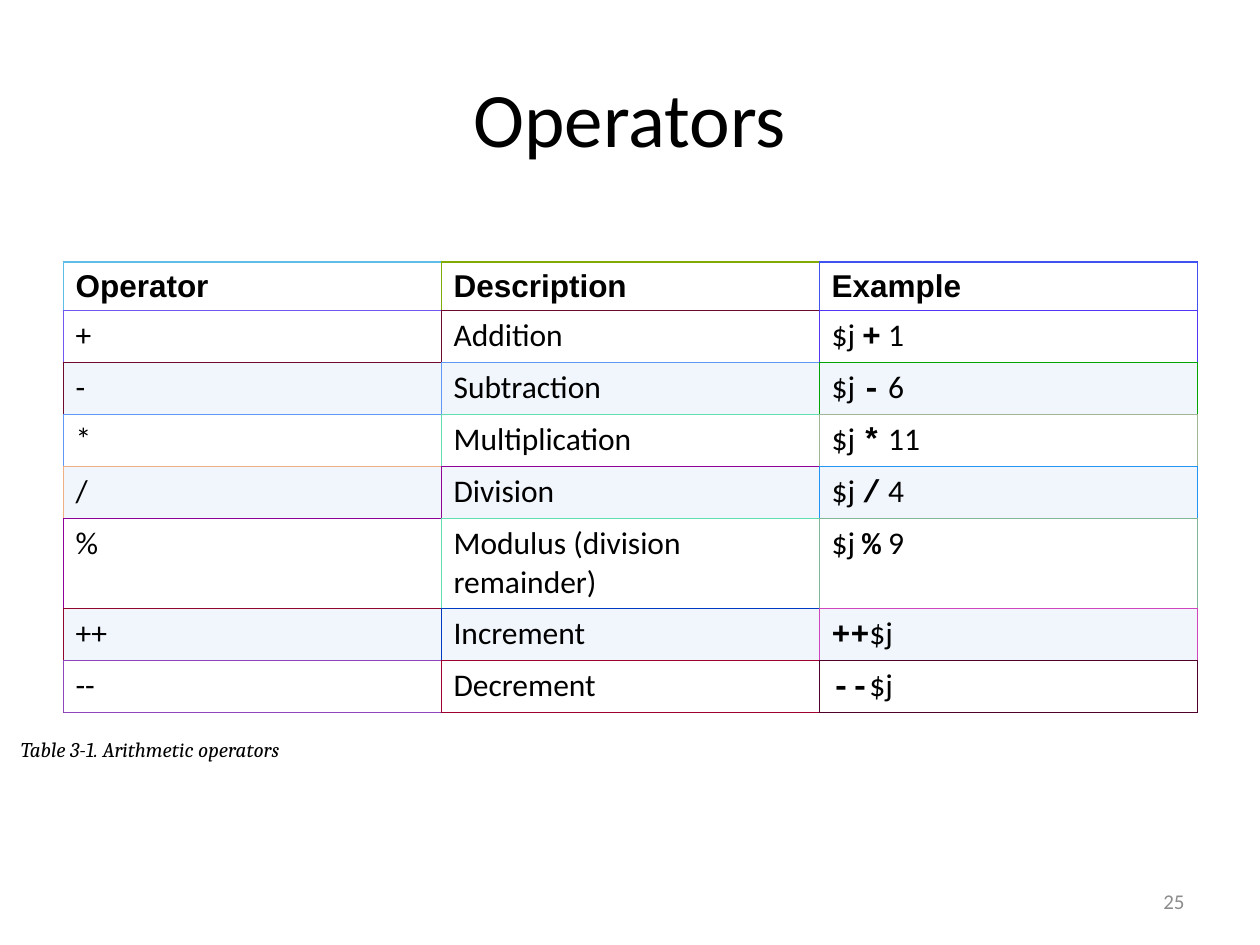
import lxml.etree
import pptx
import pptx.dml.color
import pptx.enum.text
import pptx.oxml.ns
import pptx.util

Cm = pptx.util.Cm
Pt = pptx.util.Pt
ANCHOR = pptx.enum.text.MSO_ANCHOR
ALIGN = pptx.enum.text.PP_ALIGN

BLACK = "000000"
BAND = "F1F6FC"
HEADERS = ["Operator", "Description", "Example"]
OPERATORS = [
    ("+", "Addition", "$j ", " 1"),
    ("-", "Subtraction", "$j ", " 6"),
    ("*", "Multiplication", "$j ", " 11"),
    ("/", "Division", "$j ", " 4"),
    ("%", "Modulus (division remainder)", "$j ", " 9"),
    ("++", "Increment", "", "$j"),
    ("--", "Decrement", "", "$j"),
]
BORDER_COLORS = [
    ("60BDE5", "80AC05", "4052EF"),
    ("7059EF", "700A2D", "5037F6"),
    ("700A2D", "6098F6", "00A405"),
    ("6098F6", "60E0B1", "A0B697"),
    ("F0AF82", "90019A", "2095F6"),
    ("90019A", "60E0B1", "80B897"),
    ("90062D", "0039C2", "D044BE"),
    ("9045BE", "A0002D", "50002D"),
]
HEADER_HEIGHT, ROW_HEIGHT, TALL_ROW_HEIGHT = 0.97, 1.05, 1.8


def rgb(color):
    return pptx.dml.color.RGBColor.from_string(color)


def style(run, size, font="Calibri", color=BLACK, bold=False, italic=False):
    run.font.size = Pt(size)
    run.font.name = font
    run.font.color.rgb = rgb(color)
    run.font.bold = bold
    run.font.italic = italic


def place(shape, box):
    shape.left, shape.top, shape.width, shape.height = [Cm(length) for length in box]


def add_border(cell, side, color, width):
    properties = cell._tc.get_or_add_tcPr()
    line = lxml.etree.SubElement(
        properties, pptx.oxml.ns.qn("a:ln" + side), w=str(Pt(width)))
    fill = lxml.etree.SubElement(line, pptx.oxml.ns.qn("a:solidFill"))
    lxml.etree.SubElement(fill, pptx.oxml.ns.qn("a:srgbClr"), val=color)


def add_borders(cell, row, column):
    last_row, last_column = len(BORDER_COLORS) - 1, len(HEADERS) - 1
    own = BORDER_COLORS[row][column]
    right = BORDER_COLORS[row][min(column + 1, last_column)]
    below = BORDER_COLORS[min(row + 1, last_row)][column]
    add_border(cell, "L", own, 0.5)
    add_border(cell, "R", right, 0.5)
    add_border(cell, "T", own, 1.5 if row == 0 else 0.5)
    add_border(cell, "B", below, 0.75 if row == last_row else 0.5)


def write_cell(cell, text, font="Calibri", bold=False):
    cell.text_frame.text = text
    style(cell.text_frame.paragraphs[0].runs[0], 18, font, bold=bold)


def write_example(cell, before, operator, after):
    paragraph = cell.text_frame.paragraphs[0]
    for text, font, bold in [(before, "Calibri", False),
                             (operator, "Courier New", True),
                             (after, "Calibri", False)]:
        if text:
            run = paragraph.add_run()
            run.text = text
            style(run, 18, font, bold=bold)


def add_title(slide, box):
    title = slide.shapes.title
    place(title, box)
    title.text_frame.text = "Operators"
    title.text_frame.vertical_anchor = ANCHOR.MIDDLE
    title.text_frame.paragraphs[0].alignment = ALIGN.CENTER
    style(title.text_frame.paragraphs[0].runs[0], 44)


def add_operator_table(slide, box):
    frame = slide.shapes.add_table(
        len(BORDER_COLORS), len(HEADERS), *[Cm(length) for length in box])
    table = frame.table
    table.first_row = table.horz_banding = False
    for column, header in enumerate(HEADERS):
        table.columns[column].width = Cm(box[2] / len(HEADERS))
        write_cell(table.cell(0, column), header, "Arial", True)
        table.cell(0, column).vertical_anchor = ANCHOR.BOTTOM
    table.rows[0].height = Cm(HEADER_HEIGHT)

    for row, (operator, description, before, after) in enumerate(OPERATORS, 1):
        tall = operator == "%"
        table.rows[row].height = Cm(TALL_ROW_HEIGHT if tall else ROW_HEIGHT)
        write_cell(table.cell(row, 0), operator)
        write_cell(table.cell(row, 1), description)
        write_example(table.cell(row, 2), before, operator, after)

    for row in range(len(BORDER_COLORS)):
        for column in range(len(HEADERS)):
            cell = table.cell(row, column)
            add_borders(cell, row, column)
            if row and row % 2 == 0:
                cell.fill.solid()
                cell.fill.fore_color.rgb = rgb(BAND)
            else:
                cell.fill.background()


def add_note(slide, box, text, align, margin, **look):
    note = slide.shapes.add_textbox(*[Cm(length) for length in box])
    frame = note.text_frame
    frame.text = text
    frame.word_wrap = True
    frame.vertical_anchor = ANCHOR.MIDDLE
    frame.margin_left = frame.margin_right = Cm(margin)
    frame.margin_top = frame.margin_bottom = 0
    frame.paragraphs[0].alignment = align
    style(frame.paragraphs[0].runs[0], 12, **look)


def main():
    deck = pptx.Presentation()
    deck.slide_width, deck.slide_height = Cm(25.4), Cm(19.05)
    slide = deck.slides.add_slide(deck.slide_layouts[5])
    add_title(slide, (1.27, 0.76, 22.86, 3.18))
    add_operator_table(slide, (1.27, 5.28, 22.86, 9.07))
    add_note(slide, (18.2, 17.66, 5.93, 1.01), "25", ALIGN.RIGHT, 0.25, color="8C8C8C")
    add_note(slide, (0.42, 14.85, 24.9, 0.5), "Table 3-1. Arithmetic operators",
             ALIGN.LEFT, 0, font="Cambria", italic=True)
    deck.save("out.pptx")


if __name__ == "__main__":
    main()
